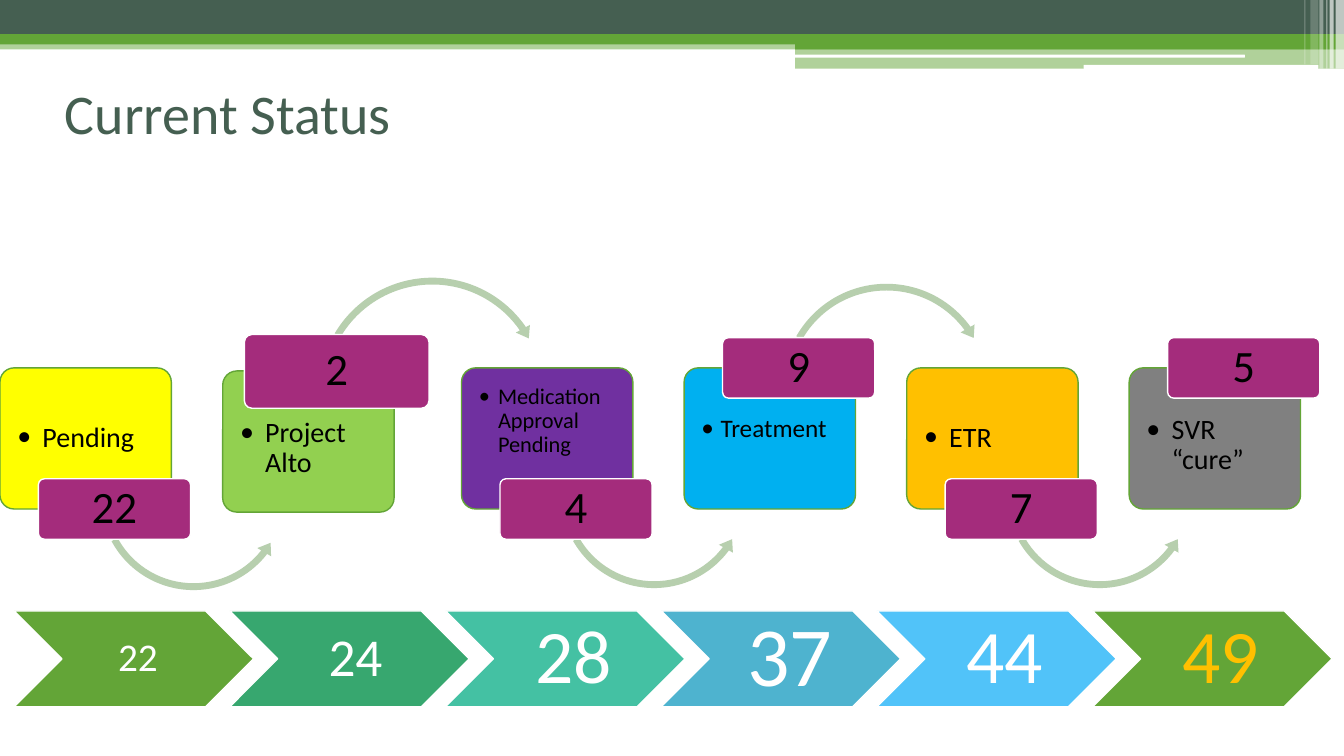
from dataclasses import dataclass
from typing import Optional

from lxml import etree
from pptx import Presentation
from pptx.dml.color import RGBColor
from pptx.enum import shapes, text
from pptx.oxml import ns
from pptx.util import Pt

FONT = "Calibri"
DARK_GREEN = RGBColor(0x45, 0x5F, 0x51)
GREEN = RGBColor(0x63, 0xA5, 0x37)
PALE_GREEN = RGBColor(0xB7, 0xCF, 0xAE)
LIME = RGBColor(0x92, 0xD0, 0x50)
YELLOW = RGBColor(0xFF, 0xFF, 0x00)
PURPLE = RGBColor(0x70, 0x30, 0xA0)
BLUE = RGBColor(0x00, 0xB0, 0xF0)
AMBER = RGBColor(0xFF, 0xC0, 0x00)
GREY = RGBColor(0x80, 0x80, 0x80)
MAGENTA = RGBColor(0xA4, 0x2C, 0x7C)
EMERALD = RGBColor(0x37, 0xA7, 0x6F)
TEAL = RGBColor(0x44, 0xC1, 0xA3)
STEEL = RGBColor(0x4E, 0xB3, 0xCF)
SKY = RGBColor(0x51, 0xC3, 0xF9)
WHITE = RGBColor(0xFF, 0xFF, 0xFF)
BLACK = RGBColor(0x00, 0x00, 0x00)

Preset = shapes.MSO_SHAPE
CARD_WIDTH, CARD_HEIGHT = 122.4, 100.8
CHEVRON_LEFT, CHEVRON_TOP, CHEVRON_PITCH = 10.08, 436.4, 154.08


@dataclass(frozen=True)
class Box:
    left: float
    top: float
    width: float
    height: float


@dataclass(frozen=True)
class Band:
    box: Box
    color: RGBColor
    opacity: int = 100
    preset: Preset = Preset.RECTANGLE


@dataclass(frozen=True)
class Arrow:
    preset: Preset
    left: float
    top: float
    size: float
    adjustments: tuple[float, ...]


@dataclass(frozen=True)
class Stage:
    label: str
    color: RGBColor
    left: float
    top: float
    text_top: float
    text_size: float
    indent: float
    count: str
    badge: Box
    arrow: Optional[Arrow] = None


@dataclass(frozen=True)
class Total:
    value: str
    color: RGBColor
    text_size: float
    inset: float
    text_color: RGBColor = WHITE


def badge_box(card_left: float, top: float) -> Box:
    return Box(card_left + 27.4, top, 108.7, 43.2)


LOW, HIGH = 342, 241.2  # badge tops at the lower and upper card edges
UNDER = (0.035, 4.341, 22.096, 90.245, 0.041)

BANDS = [
    Band(Box(0, 28.8, 960, 6.5), GREEN, 50),
    Band(Box(0, 0, 960, 24.5), DARK_GREEN),
    Band(Box(0, 24.5, 960, 7.2), GREEN),
    Band(Box(568, 28.1, 392, 7.2), GREEN),
    Band(Box(568, 34.9, 392, 14.1), GREEN, 50),
    Band(Box(567.4, 39, 321.8, 2.2), WHITE, 100, Preset.ROUNDED_RECTANGLE),
    Band(Box(774, 46.3, 167.8, 2.9), WHITE, 100, Preset.ROUNDED_RECTANGLE),
    Band(Box(954, 0, 6, 49), WHITE, 65),
    Band(Box(949.7, 0, 2.9, 49), WHITE, 65),
    Band(Box(947.5, 0, 0.7, 49), WHITE, 60),
    Band(Box(942.5, 0, 2.9, 49), WHITE, 40),
    Band(Box(936, 0, 5.8, 46), WHITE, 20),
    Band(Box(931.7, 0, 0.7, 46), WHITE, 30),
]

STAGES = [
    Stage("Pending", YELLOW, 0, 262.8, 36.3, 20, 18, "22", badge_box(0, LOW),
          Arrow(Preset.LEFT_CIRCULAR_ARROW, 68.4, 285.1, 139.7,
                (0.035, 4.34, 22.811, 90.961, 0.041))),
    Stage("Project Alto", LIME, 159.1, 265, 31, 20, 18, "2",
          Box(174.6, 239, 131.8, 52.6),
          Arrow(Preset.CIRCULAR_ARROW, 224.6, 195.1, 168.5,
                (0.029, 3.54, 195.289, 126.339, 0.034))),
    Stage("Medication Approval Pending", PURPLE, 329.7, 262.8, 9.5, 16, 13.7, "4",
          badge_box(329.7, LOW),
          Arrow(Preset.LEFT_CIRCULAR_ARROW, 397.4, 283.7, 139.7, UNDER)),
    Stage("Treatment", BLUE, 488.7, 262.8, 31, 18, 13.7, "9", badge_box(488.7, HIGH),
          Arrow(Preset.CIRCULAR_ARROW, 555.8, 199.4, 154.8,
                (0.031, 3.872, 194.373, 125.755, 0.037))),
    Stage("ETR", AMBER, 647.7, 262.8, 36.3, 20, 18, "7", badge_box(647.7, LOW),
          Arrow(Preset.LEFT_CIRCULAR_ARROW, 715.7, 283.7, 139.7, UNDER)),
    Stage("SVR “cure”", GREY, 806.6, 262.8, 31, 20, 18, "5", badge_box(806.6, HIGH)),
]

TOTALS = [
    Total("22", GREEN, 28, 2.9),
    Total("24", EMERALD, 38, 4.3),
    Total("28", TEAL, 54, 5.8),
    Total("37", STEEL, 60, 6.5),
    Total("44", SKY, 54, 5.8),
    Total("49", GREEN, 54, 5.8, AMBER),
]


def add_filled(slide, preset: Preset, box: Box, color: RGBColor,
               line: Optional[RGBColor] = None):
    shape = slide.shapes.add_shape(
        preset, Pt(box.left), Pt(box.top), Pt(box.width), Pt(box.height))
    shape.shadow.inherit = False
    shape.fill.solid()
    shape.fill.fore_color.rgb = color
    if line is None:
        shape.line.fill.background()
    else:
        shape.line.color.rgb = line
        shape.line.width = Pt(1)
    return shape


def write(shape, words: str, size: float, color: RGBColor, alignment, anchor,
          insets: tuple[float, float, float, float]):
    frame = shape.text_frame
    frame.word_wrap = True
    frame.vertical_anchor = anchor
    frame.margin_left, frame.margin_top, frame.margin_right, frame.margin_bottom = map(Pt, insets)
    paragraph = frame.paragraphs[0]
    paragraph.alignment = alignment
    paragraph.line_spacing = 0.9
    run = paragraph.add_run()
    run.text = words
    run.font.name = FONT
    run.font.size = Pt(size)
    run.font.color.rgb = color
    return paragraph


def add_band(slide, band: Band) -> None:
    shape = add_filled(slide, band.preset, band.box, band.color)
    if band.opacity < 100:
        color = shape.fill._xPr.find(".//" + ns.qn("a:srgbClr"))
        etree.SubElement(color, ns.qn("a:alpha"), val=str(band.opacity * 1000))


def add_stage(slide, stage: Stage) -> None:
    card = add_filled(slide, Preset.ROUNDED_RECTANGLE,
                      Box(stage.left, stage.top, CARD_WIDTH, CARD_HEIGHT), stage.color, GREEN)
    card.adjustments[0] = 0.1
    paragraph = write(card, stage.label, stage.text_size, BLACK, text.PP_ALIGN.LEFT,
                      text.MSO_ANCHOR.TOP, (9.4, stage.text_top, 10, 0))
    properties = paragraph._p.get_or_add_pPr()
    properties.set("marL", str(Pt(stage.indent)))
    properties.set("indent", str(-Pt(stage.indent)))
    etree.SubElement(properties, ns.qn("a:buFont"), typeface=FONT)
    etree.SubElement(properties, ns.qn("a:buChar"), char="•")

    if stage.arrow:
        arrow = stage.arrow
        shape = add_filled(slide, arrow.preset,
                           Box(arrow.left, arrow.top, arrow.size, arrow.size), PALE_GREEN)
        for index, value in enumerate(arrow.adjustments):
            shape.adjustments[index] = value

    badge = add_filled(slide, Preset.ROUNDED_RECTANGLE, stage.badge, MAGENTA, WHITE)
    badge.adjustments[0] = 0.1
    write(badge, stage.count, 32, BLACK, text.PP_ALIGN.CENTER,
          text.MSO_ANCHOR.MIDDLE, (5, 3, 5, 3))


def add_total(slide, position: int, total: Total) -> None:
    box = Box(CHEVRON_LEFT + position * CHEVRON_PITCH, CHEVRON_TOP, 171, 68.4)
    chevron = add_filled(slide, Preset.CHEVRON, box, total.color, WHITE)
    inset = total.inset
    write(chevron, total.value, total.text_size, total.text_color, text.PP_ALIGN.CENTER,
          text.MSO_ANCHOR.MIDDLE, (3 * inset, inset, inset, inset))


def main() -> None:
    presentation = Presentation()
    presentation.slide_width, presentation.slide_height = Pt(960), Pt(540)
    slide = presentation.slides.add_slide(presentation.slide_layouts[5])

    # Header bands and title
    for band in BANDS:
        add_band(slide, band)
    title = slide.shapes.title
    title.left, title.top, title.width, title.height = Pt(39.2), Pt(38.2), Pt(864), Pt(84.2)
    write(title, "Current Status", 40, DARK_GREEN, text.PP_ALIGN.LEFT,
          text.MSO_ANCHOR.MIDDLE, (7.2, 3.6, 7.2, 3.6)).line_spacing = 1.0

    # Stages with their counts, then running totals
    for stage in STAGES:
        add_stage(slide, stage)
    for position, total in enumerate(TOTALS):
        add_total(slide, position, total)

    presentation.save("out.pptx")


if __name__ == "__main__":
    main()
